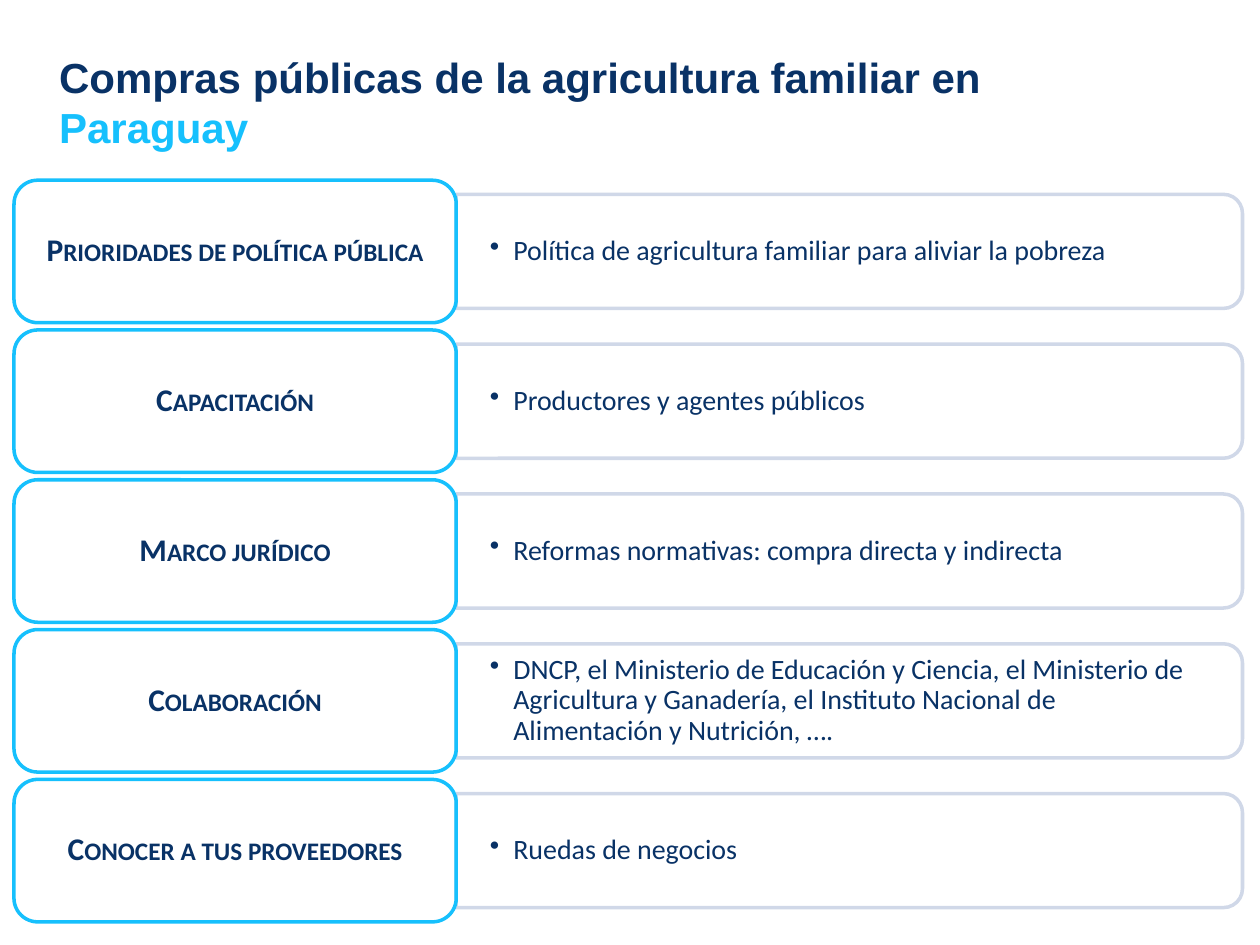
from lxml import etree
from pptx import Presentation
from pptx import util as u
from pptx.dml.color import RGBColor
from pptx.enum import shapes, text
from pptx.oxml.ns import qn

NAVY, SKY, PALE = "093266", "16C0FD", "D0D8E8"
HEAD = {"name": "Arial", "size": u.Pt(24), "bold": True}
LABEL = {"name": "Calibri", "size": u.Pt(18), "bold": True}
BODY = {"name": "Calibri", "size": u.Pt(16), "bold": False}

TOP, STEP, HIGH = 103, 85.6, 81.4
LEFT, WIDE = 8, 252.7
EDGE = LEFT + WIDE
LONG, SLIM, BOX = 449.3, 65.2, 59

ROWS = [
    ("Prioridades de política pública",
     "Política de agricultura familiar para aliviar la pobreza"),
    ("Capacitación", "Productores y agentes públicos"),
    ("Marco jurídico", "Reformas normativas: compra directa y indirecta"),
    ("Colaboración",
     "DNCP, el Ministerio de Educación y Ciencia, el Ministerio de "
     "Agricultura y Ganadería, el Instituto Nacional de "
     "Alimentación y Nutrición, …."),
    ("Conocer a tus proveedores", "Ruedas de negocios"),
]


def color(code):
    return RGBColor.from_string(code)


def assign(item, values):
    for key, value in values.items():
        setattr(item, key, value)


class Deck:
    def __init__(self):
        self.file = Presentation()
        assign(self.file, {"slide_width": u.Pt(720), "slide_height": u.Pt(540)})
        self.slide = self.file.slides.add_slide(self.file.slide_layouts[5])

    def words(self, para, line, style, code=NAVY):
        """Add a styled run to a paragraph and return it."""
        run = para.add_run()
        run.text = line
        assign(run.font, style)
        run.font.color.rgb = color(code)
        return run

    def frame(self, shape, side, edge):
        """Set wrapping, middle anchor and insets; return the text frame."""
        area = shape.text_frame
        assign(area, {
            "word_wrap": True,
            "auto_size": text.MSO_AUTO_SIZE.NONE,
            "vertical_anchor": text.MSO_ANCHOR.MIDDLE,
            "margin_left": u.Pt(side), "margin_right": u.Pt(side),
            "margin_top": u.Pt(edge), "margin_bottom": u.Pt(edge),
        })
        return area

    def title(self, parts, *place):
        shape = self.slide.shapes.title
        assign(shape, dict(zip(("left", "top", "width", "height"),
                               map(u.Pt, place))))
        para = self.frame(shape, 7.2, 3.6).paragraphs[0]
        para.alignment = text.PP_ALIGN.LEFT
        for line, code in parts:
            self.words(para, line, HEAD, code)

    def shape(self, kind, code, *place):
        """Add an unfilled outline shape."""
        item = self.slide.shapes.add_shape(kind, *map(u.Pt, place))
        item.shadow.inherit = False
        item.fill.background()
        item.line.color.rgb = color(code)
        item.line.width = u.Pt(2)
        return item

    def label(self, line, mid):
        item = self.shape(shapes.MSO_SHAPE.ROUNDED_RECTANGLE, SKY,
                          LEFT, mid - HIGH / 2, WIDE, HIGH)
        para = self.frame(item, 9, 7).paragraphs[0]
        assign(para, {"alignment": text.PP_ALIGN.CENTER, "line_spacing": 0.9})
        run = self.words(para, line, LABEL)
        run._r.get_or_add_rPr().set("cap", "small")

    def panel(self, mid):
        """Add a panel rounded on its right, by a quarter turn."""
        item = self.shape(shapes.MSO_SHAPE.ROUND_2_SAME_RECTANGLE, PALE,
                          EDGE + (LONG - SLIM) / 2, mid - LONG / 2, SLIM, LONG)
        item.rotation = 90

    def bullet(self, line, mid):
        place = EDGE, mid - BOX / 2, LONG - 3, BOX
        item = self.slide.shapes.add_textbox(*map(u.Pt, place))
        para = self.frame(item, 19.2, 10).paragraphs[0]
        props = para._p.get_or_add_pPr()
        props.set("marL", str(u.Pt(13.5)))
        props.set("indent", str(u.Pt(-13.5)))
        etree.SubElement(props, qn("a:buChar")).set("char", "•")
        assign(para, {"level": 1, "line_spacing": 0.9})
        self.words(para, line, BODY)


def main():
    deck = Deck()
    deck.title([("Compras públicas de la agricultura familiar en ", NAVY),
                ("Paraguay", SKY)], 26.6, 13, 602, 90)
    for row, (name, line) in enumerate(ROWS):
        mid = TOP + HIGH / 2 + row * STEP
        deck.panel(mid)
        deck.bullet(line, mid)
        deck.label(name, mid)
    deck.file.save("out.pptx")


if __name__ == "__main__":
    main()
